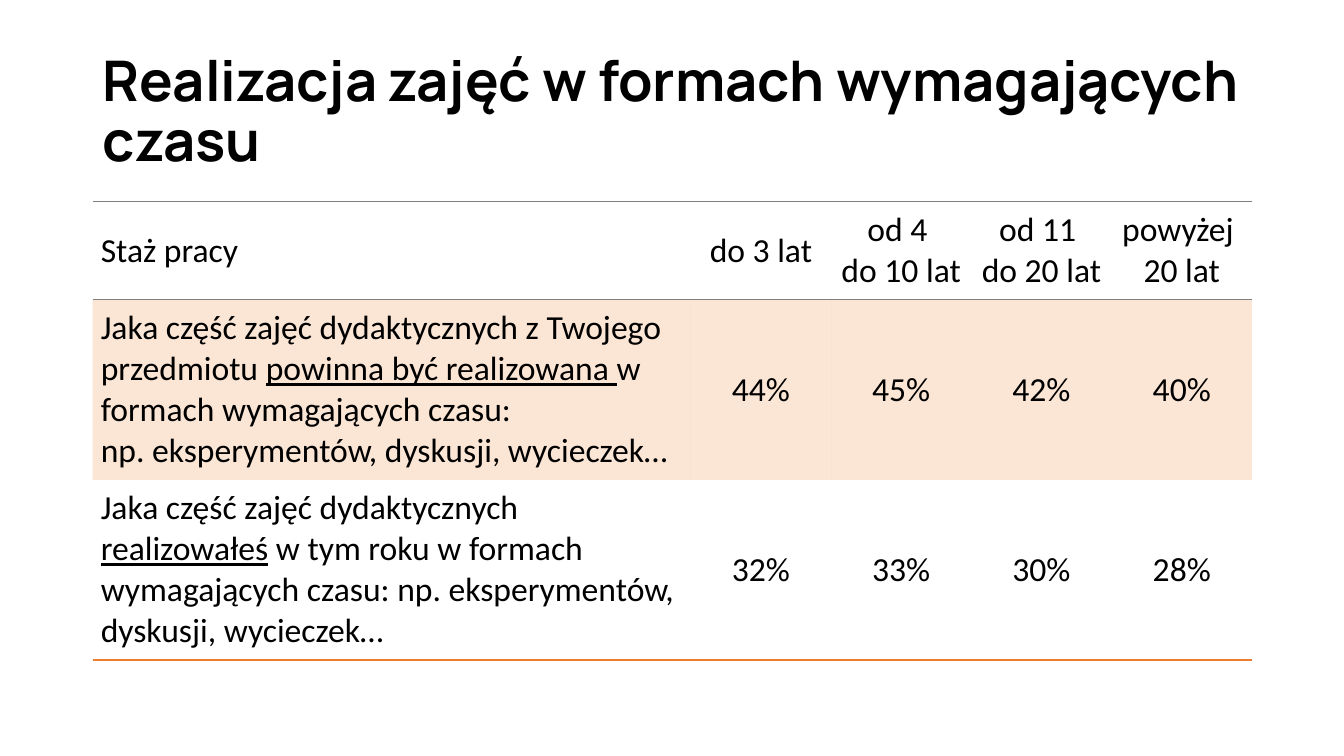
from lxml.etree import SubElement
from pptx import Presentation
from pptx.dml.color import RGBColor
from pptx.enum.text import MSO_ANCHOR, MSO_AUTO_SIZE, PP_ALIGN
from pptx.oxml.ns import qn
from pptx.util import Inches, Pt

HEADER = ["Staż pracy", "do 3 lat", "od 4 \ndo 10 lat", "od 11 \ndo 20 lat", "powyżej \n20 lat"]
SHOULD = ("Jaka część zajęć dydaktycznych z Twojego przedmiotu |powinna być realizowana |"
          "w formach wymagających czasu: \nnp. eksperymentów, dyskusji, wycieczek…")
DID = ("Jaka część zajęć dydaktycznych |realizowałeś| w tym roku w formach "
       "wymagających czasu: np. eksperymentów, dyskusji, wycieczek…")
ROWS = [
    HEADER,
    [SHOULD, "44%", "45%", "42%", "40%"],
    [DID, "32%", "33%", "30%", "28%"],
]
TEXT, ACCENT, RULE = "000000", "ED7D31", "7F7F7F"


def rgb(color):
    return RGBColor.from_string(color)


class Deck:
    title_font, body_font = "Manrope", "Calibri"

    def __init__(self):
        self.prs = Presentation()
        self.prs.slide_width, self.prs.slide_height = Inches(13.33), Inches(7.5)
        self.s = self.prs.slides.add_slide(self.prs.slide_layouts[5])

    def x(self, percent):
        return int(self.prs.slide_width * percent / 100)

    def y(self, percent):
        return int(self.prs.slide_height * percent / 100)

    def style(self, r, font, size, bold=False, underline=False):
        r.font.name, r.font.size = font, Pt(size)
        r.font.bold, r.font.underline = bold, underline
        r.font.color.rgb = rgb(TEXT)

    def title(self, text, left, top, width, height):
        sp = self.s.shapes.title
        sp.left, sp.top = self.x(left), self.y(top)
        sp.width, sp.height = self.x(width), self.y(height)
        tf = sp.text_frame
        tf.text = text
        tf.auto_size = MSO_AUTO_SIZE.NONE
        tf.vertical_anchor = MSO_ANCHOR.MIDDLE
        p = tf.paragraphs[0]
        p.alignment, p.line_spacing = PP_ALIGN.LEFT, 0.9
        self.style(p.runs[0], self.title_font, 40, bold=True)

    def rich_text(self, p, text):
        for i, part in enumerate(text.split("|")):
            for j, line in enumerate(part.split("\n")):
                if j:
                    p.add_line_break()
                r = p.add_run()
                r.text = line
                self.style(r, self.body_font, 24, underline=i % 2 == 1)

    def border(self, cell, side, color, width):
        ln = SubElement(cell._tc.get_or_add_tcPr(), qn(f"a:ln{side}"), w=str(Pt(width)))
        fill = SubElement(ln, qn("a:solidFill"))
        SubElement(fill, qn("a:srgbClr"), val=color)

    def tint(self, cell, color, alpha):
        cell.fill.solid()
        cell.fill.fore_color.rgb = rgb(color)
        clr = cell._tc.tcPr.find(f".//{qn('a:solidFill')}[last()]/{qn('a:srgbClr')}")
        SubElement(clr, qn("a:alpha"), val=str(alpha * 1000))

    def cell(self, cell, text, row, col):
        figure = row > 0 and col > 0
        inset = Inches(0.01 if figure else 0.08)
        cell.margin_left = cell.margin_right = cell.margin_top = cell.margin_bottom = inset
        cell.vertical_anchor = MSO_ANCHOR.BOTTOM if row and not col else MSO_ANCHOR.MIDDLE
        p = cell.text_frame.paragraphs[0]
        p.alignment = PP_ALIGN.CENTER if col else PP_ALIGN.LEFT
        self.rich_text(p, text)
        if row == 0:
            self.border(cell, "T", RULE, 0.5)
            self.border(cell, "B", RULE, 0.5)
        if row == 2:
            self.border(cell, "B", ACCENT, 1)
        if row == 1:
            self.tint(cell, ACCENT, 20)
        else:
            cell.fill.background()

    def table(self, rows, left, top, widths, heights):
        frame = self.s.shapes.add_table(len(rows), len(widths), self.x(left), self.y(top),
                                        self.x(sum(widths)), self.y(sum(heights)))
        tbl = frame.table
        tbl.first_row = tbl.horz_banding = False
        style_id = tbl._tbl.tblPr.find(qn("a:tableStyleId"))
        style_id.text = "{2D5ABB26-0587-4C30-8999-92F81FD0307C}"
        for column, width in zip(tbl.columns, widths):
            column.width = self.x(width)
        for i, (values, height) in enumerate(zip(rows, heights)):
            tbl.rows[i].height = self.y(height)
            for j, value in enumerate(values):
                self.cell(tbl.cell(i, j), value, i, j)


def main():
    deck = Deck()
    deck.title("Realizacja zajęć w formach wymagających czasu", 6.9, 5.33, 86.25, 19.33)
    deck.table(ROWS, 6.9, 26.67, [44.5] + [10.44] * 4, [12.97] + [23.73] * 2)
    deck.prs.save("out.pptx")


if __name__ == "__main__":
    main()
